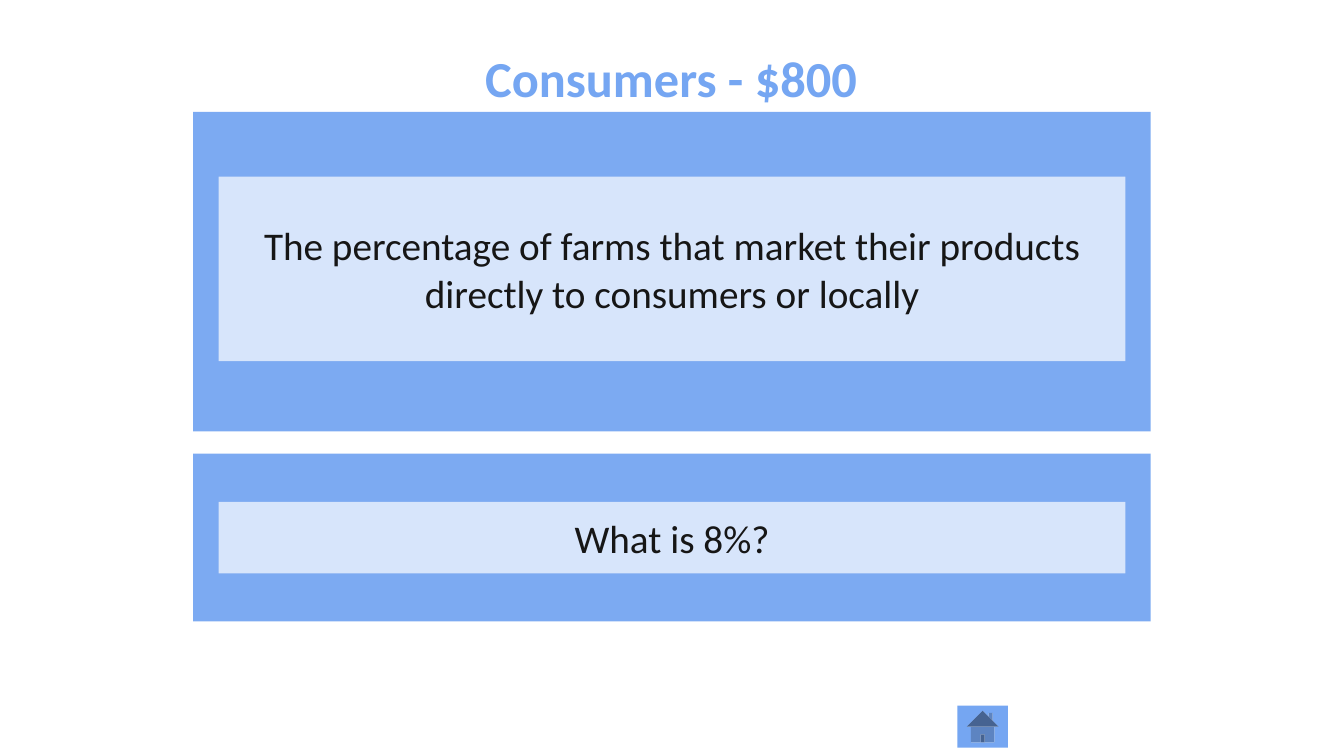
from lxml import etree
from pptx import Presentation
from pptx.dml.color import RGBColor
from pptx.enum.shapes import MSO_SHAPE
from pptx.enum.text import MSO_ANCHOR, PP_ALIGN
from pptx.oxml.ns import qn
from pptx.util import Cm, Pt

RECT = MSO_SHAPE.RECTANGLE
HOME = MSO_SHAPE.ACTION_BUTTON_HOME
TOP, MIDDLE = MSO_ANCHOR.TOP, MSO_ANCHOR.MIDDLE
CENTER = PP_ALIGN.CENTER

BLUE = RGBColor(0x75, 0xA6, 0xF2)
WHITE = RGBColor(0xFF, 0xFF, 0xFF)
INK = RGBColor(0x16, 0x16, 0x16)
FONT = "Calibri"


def add_block(s, kind, x, y, w, h, color, opacity=100):
    sp = s.shapes.add_shape(kind, Cm(x), Cm(y), Cm(w), Cm(h))
    sp.shadow.inherit = False
    sp.fill.solid()
    sp.fill.fore_color.rgb = color
    sp.line.fill.background()
    if opacity < 100:
        clr = sp.fill._xPr.find(qn("a:solidFill"))[0]
        etree.SubElement(clr, qn("a:alpha"), val=str(opacity * 1000))
    return sp


def write_text(sp, text, size, color, anchor, bold=False):
    tf = sp.text_frame
    tf.word_wrap = True
    tf.vertical_anchor = anchor
    p = tf.paragraphs[0]
    p.alignment = CENTER
    r = p.add_run()
    r.text = text
    r.font.name = FONT
    r.font.size = Pt(size)
    r.font.bold = bold
    r.font.color.rgb = color


def add_title(s, x, y, w, h, text):
    sp = s.shapes.add_textbox(Cm(x), Cm(y), Cm(w), Cm(h))
    tf = sp.text_frame
    tf.margin_left = tf.margin_right = tf.margin_top = tf.margin_bottom = 0
    write_text(sp, text, 36, BLUE, TOP, bold=True)


def add_panel(s, x, y, w, h, text, text_top, text_height):
    margin = 0.64
    add_block(s, RECT, x, y, w, h, BLUE, 95)
    sp = add_block(s, RECT, x + margin, y + text_top, w - 2 * margin, text_height, WHITE, 70)
    write_text(sp, text, 28, INK, MIDDLE)


def add_question_slide(prs, title, clue, response):
    s = prs.slides.add_slide(prs.slide_layouts[6])
    left, width = 4.87, 24.13
    add_panel(s, left, 11.43, width, 4.23, response, 1.22, 1.8)
    add_panel(s, left, 2.82, width, 8.05, clue, 1.63, 4.65)
    add_title(s, 0.61, 1.19, 32.61, 2.36, title)
    add_block(s, HOME, 24.13, 17.78, 1.27, 1.06, BLUE)


def main():
    prs = Presentation()
    prs.slide_width, prs.slide_height = Cm(33.87), Cm(19.05)
    add_question_slide(
        prs,
        "Consumers - $800",
        "The percentage of farms that market their products directly to consumers or locally",
        "What is 8%?",
    )
    prs.save("out.pptx")


if __name__ == "__main__":
    main()
